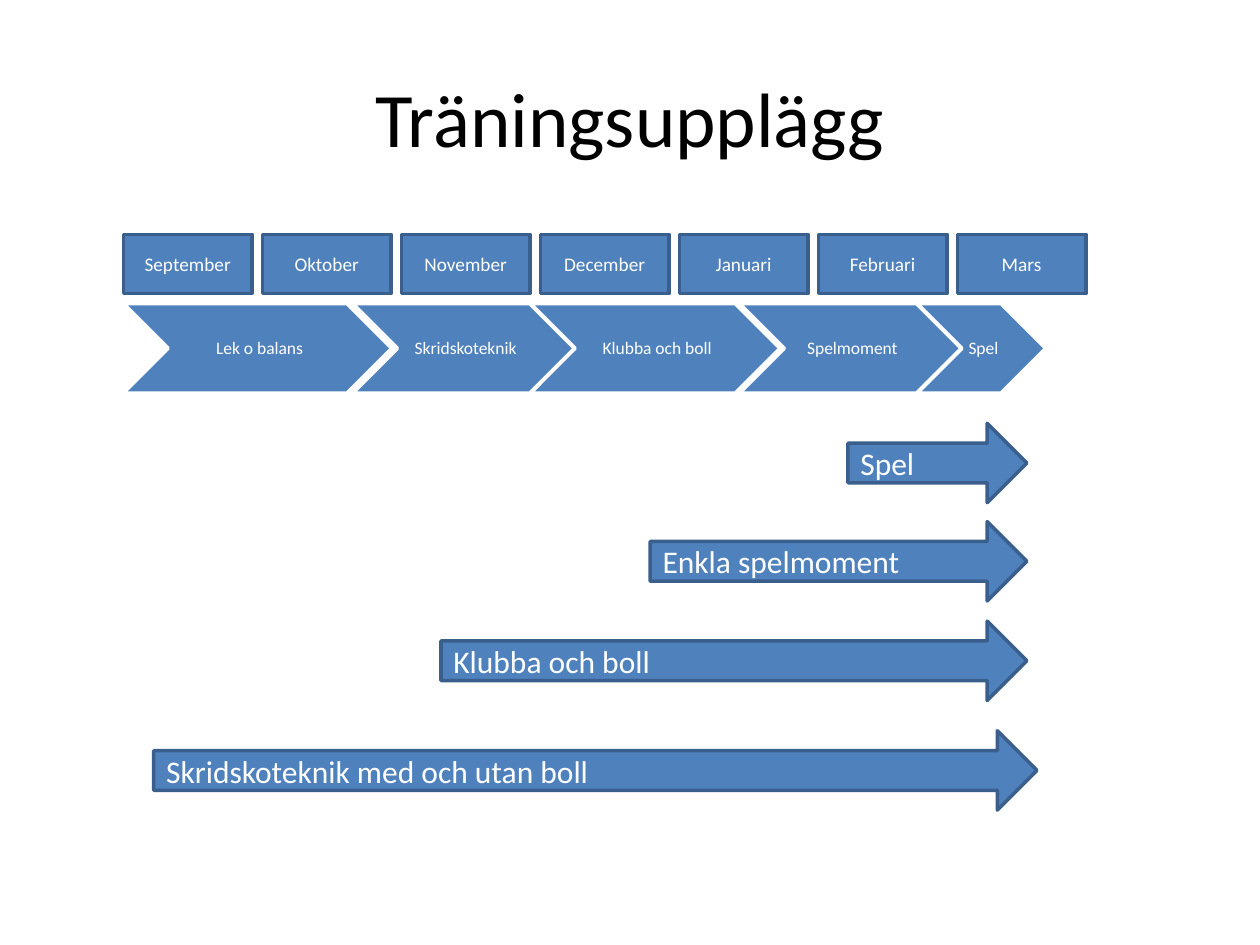
"""Build the training plan slide with months, phases and ongoing themes."""
from pptx import Presentation
from pptx.dml.color import RGBColor
from pptx.enum.shapes import MSO_SHAPE as Shape
from pptx.enum.text import MSO_ANCHOR as Anchor, PP_ALIGN as Align
from pptx.util import Inches, Pt

TITLE = "Träningsupplägg"
MONTHS = ["September", "Oktober", "November", "December", "Januari", "Februari", "Mars"]
PHASES = [
    ("Lek o balans", 0.98, 2.13),
    ("Skridskoteknik", 2.8, 1.76),
    ("Klubba och boll", 4.21, 1.98),
    ("Spelmoment", 5.87, 1.76),
    ("Spel", 7.28, 1.02),
]
THEMES = [
    ("Spel", 6.73, 3.36, 8.15),
    ("Enkla spelmoment", 5.16, 4.14, 8.15),
    ("Klubba och boll", 3.5, 4.93, 8.15),
    ("Skridskoteknik med och utan boll", 1.22, 5.8, 8.23),
]
COLORS = {"fill": "4F81BD", "edge": "3A5F8C", "white": "FFFFFF", "black": "000000"}
FONT = "Calibri"
MONTH_LEFT, MONTH_PITCH = 0.98, 1.103


def color(name):
    return RGBColor.from_string(COLORS[name])


def write(shape, text, size, ink, align):
    frame = shape.text_frame
    frame.text = text
    frame.vertical_anchor = Anchor.MIDDLE
    para = frame.paragraphs[0]
    para.alignment = align
    font = para.runs[0].font
    font.name, font.size = FONT, Pt(size)
    font.color.rgb = color(ink)
    return frame


def add_block(page, kind, box, text, size, edge="edge", align=Align.CENTER):
    shape = page.shapes.add_shape(kind, *map(Inches, box))
    shape.shadow.inherit = False
    shape.fill.solid()
    shape.fill.fore_color.rgb = color("fill")
    shape.line.color.rgb = color(edge)
    shape.line.width = Pt(2)
    return write(shape, text, size, "white", align)


def main():
    deck = Presentation()
    deck.slide_width, deck.slide_height = Inches(10), Inches(7.5)
    page = deck.slides.add_slide(deck.slide_layouts[5])

    title = page.shapes.title
    title.left, title.top = Inches(0.5), Inches(0.3)
    title.width, title.height = Inches(9), Inches(1.25)
    write(title, TITLE, 44, "black", Align.CENTER)

    for index, month in enumerate(MONTHS):
        left = MONTH_LEFT + index * MONTH_PITCH
        add_block(page, Shape.RECTANGLE, (left, 1.86, 1.02, 0.47), month, 11)

    for phase, left, width in PHASES:
        frame = add_block(page, Shape.CHEVRON, (left, 2.41, width, 0.71), phase, 10, "white")
        frame.word_wrap = False
        frame.margin_left = Inches(0.04)
        frame.margin_top = frame.margin_right = frame.margin_bottom = Inches(0.01)
        frame.paragraphs[0].line_spacing = 0.9

    for theme, left, top, right in THEMES:
        box = (left, top, right - left, 0.63)
        add_block(page, Shape.RIGHT_ARROW, box, theme, 18, align=Align.LEFT)

    deck.save("out.pptx")


if __name__ == "__main__":
    main()
